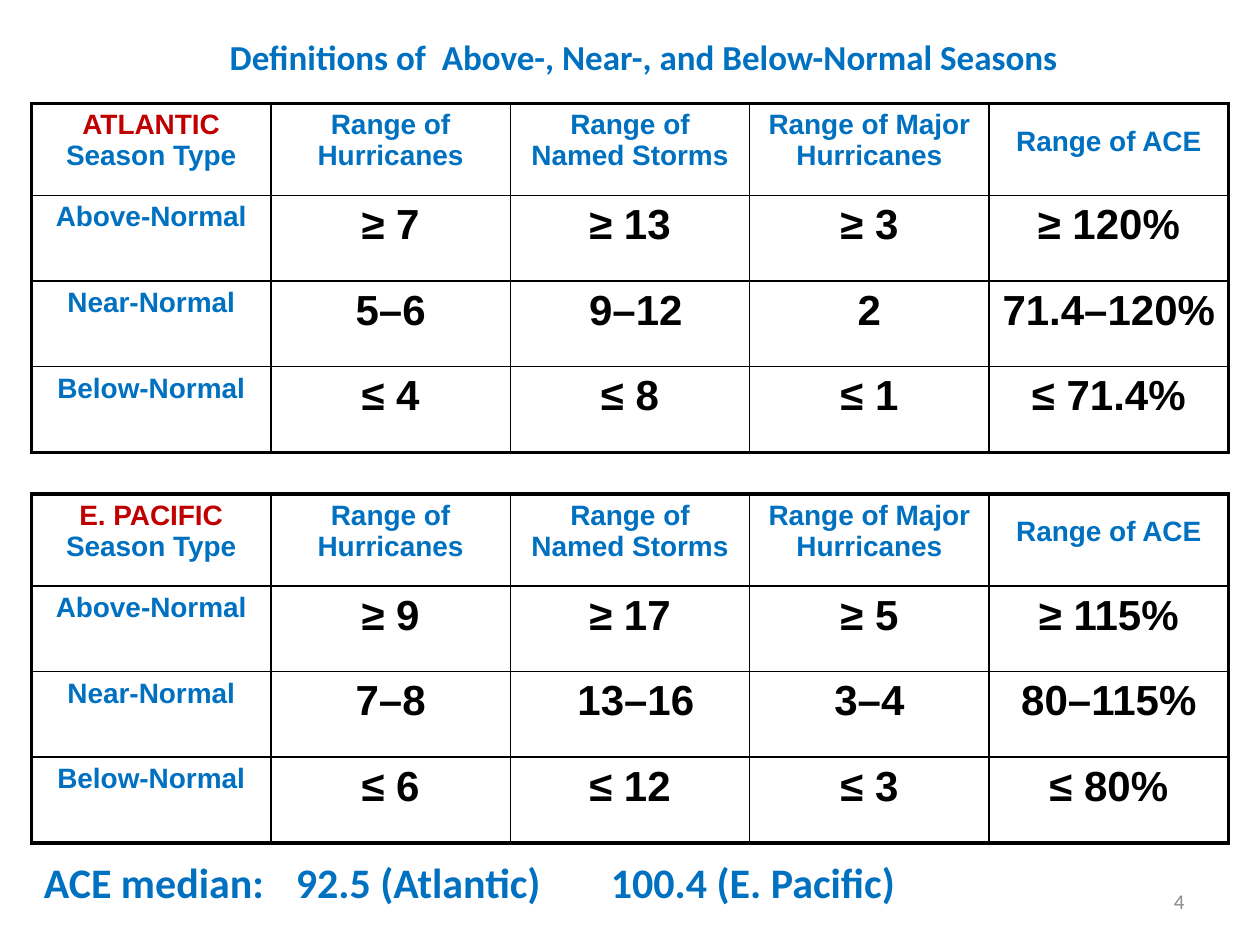
import pptx
import pptx.dml.color
import pptx.enum.text
import pptx.oxml
import pptx.oxml.ns
import pptx.util

PX = 9144
COLORS = {"blue": "0070C0", "red": "C00000", "black": "000000", "white": "FFFFFF", "gray": "8C8C8C"}
ALIGN = pptx.enum.text.PP_ALIGN
ANCHOR = pptx.enum.text.MSO_ANCHOR

HEADINGS = ["Range of Hurricanes", "Range of Named Storms", "Range of Major Hurricanes", "Range of ACE"]
SEASONS = ["Above-Normal", "Near-Normal", "Below-Normal"]
ATLANTIC = [
    ["≥ 7", "≥ 13", "≥ 3", "≥ 120%"],
    ["5–6", " 9–12", "2", "71.4–120%"],
    ["≤ 4", "≤ 8", "≤ 1", "≤ 71.4%"],
]
PACIFIC = [
    ["≥ 9", "≥ 17", "≥ 5", "≥ 115%"],
    ["7–8", " 13–16", "3–4", "80–115%"],
    ["≤ 6", "≤ 12", "≤ 3", "≤ 80%"],
]


def emu(*lengths):
    return [pptx.util.Emu(length * PX) for length in lengths]


def format_run(run, size, color, font="Arial", bold=True):
    run.font.size = pptx.util.Pt(size)
    run.font.name = font
    run.font.bold = bold
    run.font.color.rgb = pptx.dml.color.RGBColor.from_string(COLORS[color])


def write_line(frame, text, size, color, align, font="Arial", bold=True):
    frame.text = text
    line = frame.paragraphs[0]
    line.alignment = align
    format_run(line.runs[0], size, color, font, bold)
    return line


def draw_borders(cell, outer_sides):
    properties = cell._tc.get_or_add_tcPr()
    for index, side in enumerate("LRTB"):
        width = pptx.util.Pt(2.25 if side in outer_sides else 1)
        border = pptx.oxml.parse_xml(
            f'<a:ln{side} {pptx.oxml.ns.nsdecls("a")} w="{int(width)}"><a:solidFill>'
            f'<a:srgbClr val="{COLORS["black"]}"/></a:solidFill></a:ln{side}>'
        )
        properties.insert(index, border)


def add_title(slide, left, top, width, height):
    title = slide.shapes.title
    title.left, title.top, title.width, title.height = emu(left, top, width, height)
    frame = title.text_frame
    frame.auto_size = pptx.enum.text.MSO_AUTO_SIZE.NONE
    frame.word_wrap = False
    write_line(frame, "Definitions of  Above-, Near-, and Below-Normal Seasons",
               20, "blue", ALIGN.CENTER, "Calibri")


def add_basin(slide, left, top, width, height, basin, ranges):
    rows = [[basin] + HEADINGS] + [[season] + row for season, row in zip(SEASONS, ranges)]
    last_row, last_column = len(rows) - 1, len(HEADINGS)
    table = slide.shapes.add_table(len(rows), last_column + 1, *emu(left, top, width, height)).table
    table.first_row = table.horz_banding = False
    for column in table.columns:
        column.width = emu(width // (last_column + 1))[0]
    season_height = 68
    for r, row in enumerate(rows):
        table.rows[r].height = emu(season_height if r else height - season_height * last_row)[0]
        for c, text in enumerate(row):
            cell = table.cell(r, c)
            cell.fill.solid()
            cell.fill.fore_color.rgb = pptx.dml.color.RGBColor.from_string(COLORS["white"])
            is_range = r > 0 and c > 0
            line = write_line(cell.text_frame, text, 24 if is_range else 16,
                              "black" if is_range else "blue", ALIGN.CENTER)
            if r == 0 and c == 0:
                format_run(line.runs[0], 16, "red")
                season_type = line.add_run()
                season_type.text = " Season Type"
                format_run(season_type, 16, "blue")
            if r == 0 and c == last_column:
                cell.margin_top = emu(18)[0]
            edges = {"L": c == 0, "R": c == last_column, "T": r == 0, "B": r == last_row}
            draw_borders(cell, [side for side, outer in edges.items() if outer])


def add_median(slide, left, top, width, height):
    frame = slide.shapes.add_textbox(*emu(left, top, width, height)).text_frame
    frame.word_wrap = False
    write_line(frame, "ACE median:\t92.5 (Atlantic)\t\t100.4 (E. Pacific)",
               24, "blue", ALIGN.LEFT, "Calibri")


def add_page_number(slide, left, top, width, height):
    frame = slide.shapes.add_textbox(*emu(left, top, width, height)).text_frame
    frame.word_wrap = True
    frame.vertical_anchor = ANCHOR.MIDDLE
    write_line(frame, "4", 12, "gray", ALIGN.RIGHT, "Calibri", False)


def main():
    deck = pptx.Presentation()
    deck.slide_width, deck.slide_height = emu(1000, 750)
    slide = deck.slides.add_slide(deck.slide_layouts[5])
    add_title(slide, 172, 23, 678, 44)
    add_basin(slide, 25, 82, 950, 277, "ATLANTIC", ATLANTIC)
    add_basin(slide, 25, 392, 950, 277, "E. PACIFIC", PACIFIC)
    add_median(slide, 25, 675, 760, 50)
    add_page_number(slide, 717, 695, 233, 40)
    deck.save("out.pptx")


if __name__ == "__main__":
    main()
